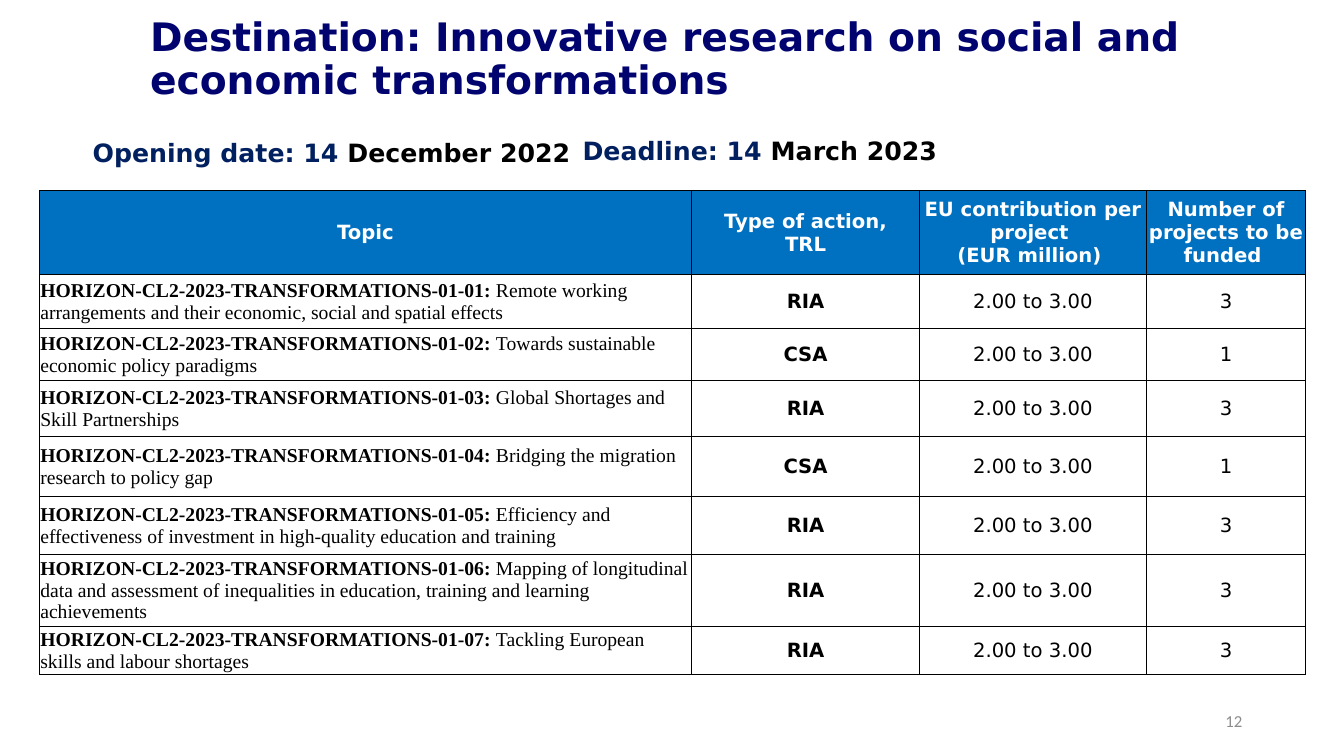
"""Build the slide listing research topics of one funding destination."""
from lxml import etree
from pptx import Presentation
from pptx.dml.color import RGBColor
from pptx.enum.text import MSO_ANCHOR as ANCHOR, PP_ALIGN as ALIGN
from pptx.oxml.ns import qn
from pptx.util import Inches, Pt

COLORS = {"title": "01046E", "label": "002060", "header": "0070C0",
          "black": "000000", "white": "FFFFFF", "grey": "8C8C8C"}
SANS, SERIF = "DejaVu Sans", "Times New Roman"

TITLE = "Destination: Innovative research on social and economic transformations"
DATES = [((5.68, 1.29, 5.24, 0.4), "Deadline: 14", " March 2023"),
         ((0.82, 1.31, 6.81, 0.4), "Opening date: 14", " December 2022")]
HEADERS = [["Topic"], ["Type of action,", "TRL"],
           ["EU contribution per project ", "(EUR million) "],
           ["Number of projects to be funded "]]
CALL = "HORIZON-CL2-2023-TRANSFORMATIONS-01-"
BUDGET = "2.00 to 3.00"
TOPICS = [
    ("Remote working arrangements and their economic, social and spatial effects", "RIA", "3"),
    ("Towards sustainable economic policy paradigms", "CSA", "1"),
    ("Global Shortages and Skill Partnerships", "RIA", "3"),
    ("Bridging the migration research to policy gap", "CSA", "1"),
    ("Efficiency and effectiveness of investment in high-quality education and training", "RIA", "3"),
    ("Mapping of longitudinal data and assessment of inequalities in education, "
     "training and learning achievements", "RIA", "3"),
    ("Tackling European skills and labour shortages", "RIA", "3"),
]
COLUMNS = [6.47, 2.26, 2.25, 1.58]
ROWS = [0.83, 0.54, 0.51, 0.56, 0.59, 0.58, 0.44, 0.48]
TABLE_LEFT, TABLE_TOP = 0.39, 1.89


def add_run(p, text, color, size=14, name=SANS, bold=False):
    r = p.add_run()
    r.text = text
    for key, value in {"size": Pt(size), "name": name, "bold": bold}.items():
        setattr(r.font, key, value)
    r.font.color.rgb = RGBColor.from_string(COLORS[color])


def add_text(s, box, runs, anchor=ANCHOR.TOP, **paragraph_format):
    tf = s.shapes.add_textbox(*map(Inches, box)).text_frame
    tf.word_wrap, tf.vertical_anchor = True, anchor
    p = tf.paragraphs[0]
    for key, value in paragraph_format.items():
        setattr(p, key, value)
    for text, style in runs:
        add_run(p, text, **style)


def add_borders(cell):
    props = cell._tc.get_or_add_tcPr()
    for i, side in enumerate(("lnL", "lnR", "lnT", "lnB")):
        line = etree.Element(qn(f"a:{side}"), w=str(Pt(0.5)))
        fill = etree.SubElement(line, qn("a:solidFill"))
        etree.SubElement(fill, qn("a:srgbClr"), val=COLORS["black"])
        props.insert(i, line)


def fill_cell(cell, paragraphs, fill, align=ALIGN.CENTER):
    inset = Inches(0.01)
    layout = {"margin_left": inset, "margin_right": inset, "margin_top": inset,
              "margin_bottom": 0, "vertical_anchor": ANCHOR.MIDDLE}
    for key, value in layout.items():
        setattr(cell, key, value)
    cell.fill.solid()
    cell.fill.fore_color.rgb = RGBColor.from_string(COLORS[fill])
    add_borders(cell)
    tf = cell.text_frame
    for i, runs in enumerate(paragraphs):
        p = tf.add_paragraph() if i else tf.paragraphs[0]
        p.alignment = align
        for text, style in runs:
            add_run(p, text, **style)


def add_topics(s):
    frame = s.shapes.add_table(len(ROWS), len(COLUMNS), Inches(TABLE_LEFT), Inches(TABLE_TOP),
                               Inches(sum(COLUMNS)), Inches(sum(ROWS)))
    table = frame.table
    for column, width in zip(table.columns, COLUMNS):
        column.width = Inches(width)
    for row, height in zip(table.rows, ROWS):
        row.height = Inches(height)
    for c, lines in enumerate(HEADERS):
        heading = [[(line, {"color": "white", "bold": True})] for line in lines]
        fill_cell(table.cell(0, c), heading, "header")
    plain = {"color": "black"}
    bold = {"color": "black", "bold": True}
    for n, (topic, action, count) in enumerate(TOPICS, 1):
        name = [(f"{CALL}{n:02}: ", {**bold, "name": SERIF}), (topic, {**plain, "name": SERIF})]
        fill_cell(table.cell(n, 0), [name], "white", ALIGN.LEFT)
        for c, (text, style) in enumerate([(action, bold), (BUDGET, plain), (count, plain)], 1):
            fill_cell(table.cell(n, c), [[(text, style)]], "white")


def main():
    prs = Presentation()
    prs.slide_width, prs.slide_height = Inches(13.33), Inches(7.5)
    s = prs.slides.add_slide(prs.slide_layouts[6])
    add_text(s, (9.42, 6.95, 3, 0.4), [("12", {"color": "grey", "size": 12, "name": "Calibri"})],
             ANCHOR.MIDDLE, alignment=ALIGN.RIGHT)
    add_topics(s)
    add_text(s, (1.39, 0.13, 11.23, 0.47), [(TITLE, {"color": "title", "size": 28, "bold": True})],
             line_spacing=0.9)
    for box, label, month in DATES:
        add_text(s, box, [(label, {"color": "label", "size": 18, "bold": True}),
                          (month, {"color": "black", "size": 18, "bold": True})])
    prs.save("out.pptx")


if __name__ == "__main__":
    main()
